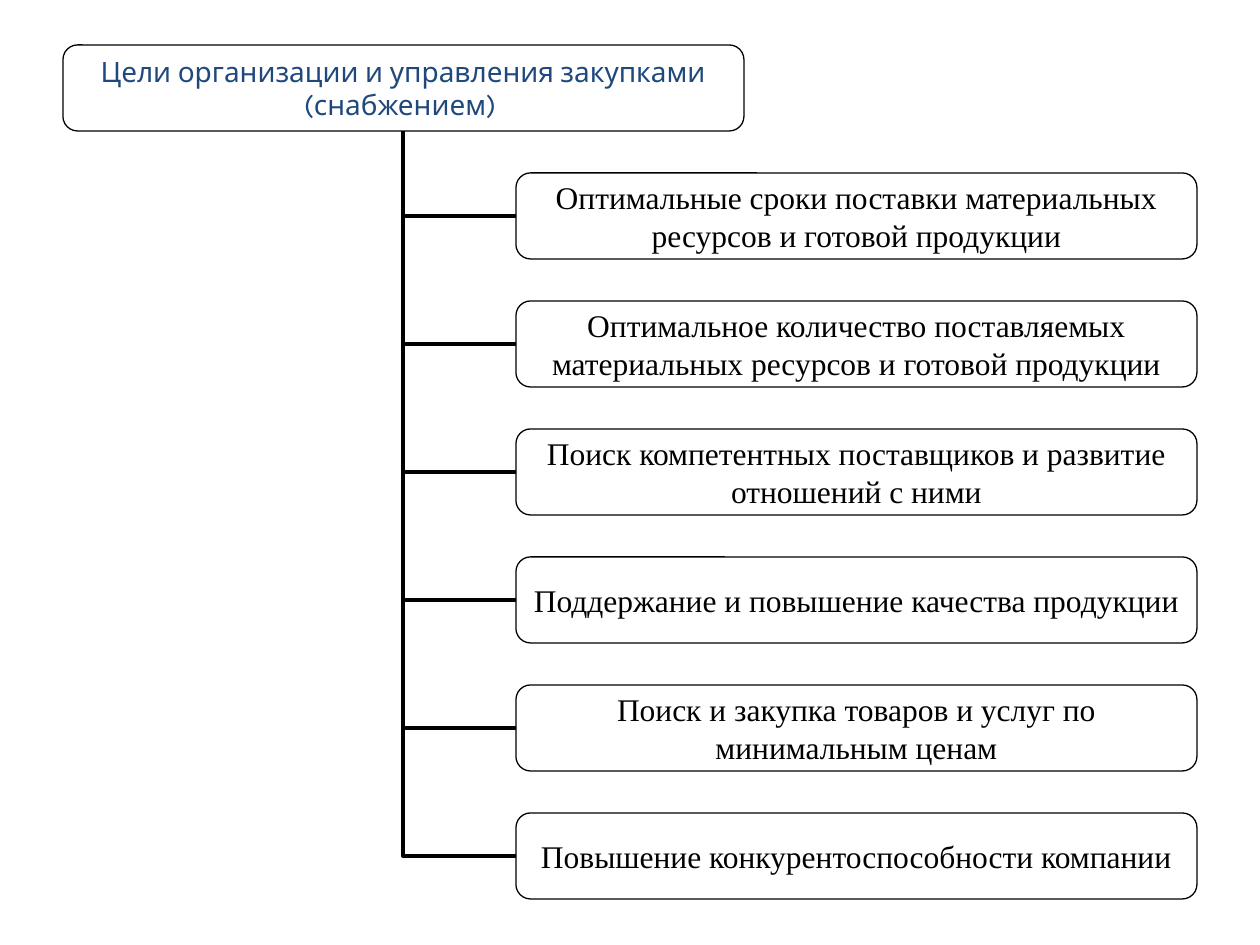
from lxml import etree
from pptx import Presentation
from pptx.dml.color import RGBColor
from pptx.enum.shapes import MSO_CONNECTOR, MSO_SHAPE
from pptx.enum.text import MSO_ANCHOR, PP_ALIGN
from pptx.oxml.ns import qn
from pptx.util import Emu, Pt

ROUNDED = MSO_SHAPE.ROUNDED_RECTANGLE
ELBOW = MSO_CONNECTOR.ELBOW
CENTER = PP_ALIGN.CENTER
MIDDLE = MSO_ANCHOR.MIDDLE

GOALS = [
    "Оптимальные сроки поставки материальных ресурсов и готовой продукции",
    "Оптимальное количество поставляемых материальных ресурсов и готовой продукции",
    "Поиск компетентных поставщиков и развитие отношений с ними",
    "Поддержание и повышение качества продукции",
    "Поиск и закупка товаров и услуг по минимальным ценам",
    "Повышение конкурентоспособности компании",
]


def px(n):
    return Emu(round(n * 914400 / 126))


def rgb(color):
    return RGBColor.from_string(color)


class Chart:
    """Draws the boxes and branches of an organisation chart on one slide."""

    ink = "000000"
    box_w, box_h = 681, 86

    def __init__(self, slide):
        self.slide = slide

    def branch(self, x1, y1, x2, y2):
        s = self.slide.shapes.add_connector(ELBOW, px(x1), px(y1), px(x2), px(y2))
        s.line.color.rgb = rgb(self.ink)
        s.line.width = Pt(2.25)
        sp_pr = s._element.spPr
        sp_pr.find(qn("a:prstGeom")).set("prst", "bentConnector2")
        etree.SubElement(sp_pr, qn("a:effectLst"))

    def box(self, x, y, text, font="Times New Roman", size=18, color=ink):
        s = self.slide.shapes.add_shape(ROUNDED, px(x), px(y), px(self.box_w), px(self.box_h))
        s.adjustments[0] = 0.17
        s.shadow.inherit = False
        s.fill.background()
        s.line.color.rgb = rgb(self.ink)
        s.line.width = Pt(0.75)
        tf = s.text_frame
        tf.word_wrap = True
        tf.vertical_anchor = MIDDLE
        tf.margin_left = tf.margin_right = tf.margin_top = tf.margin_bottom = 0
        p = tf.paragraphs[0]
        p.alignment = CENTER
        r = p.add_run()
        r.text = text
        r.font.name = font
        r.font.size = Pt(size)
        r.font.color.rgb = rgb(color)


def main():
    prs = Presentation()
    prs.slide_width, prs.slide_height = px(1260), px(945)
    chart = Chart(prs.slides.add_slide(prs.slide_layouts[6]))

    root_x, goal_x, top, pitch = 63, 516, 45, 128
    trunk_x = root_x + chart.box_w // 2
    rows = [top + pitch * i for i in range(1, len(GOALS) + 1)]
    for y in reversed(rows):
        chart.branch(goal_x, y + chart.box_h // 2, trunk_x, top + chart.box_h)
    chart.box(root_x, top, "Цели организации и управления закупками (снабжением) ",
              "Karla", 16, "1F497D")
    for y, goal in zip(rows, GOALS):
        chart.box(goal_x, y, goal)

    prs.save("out.pptx")


if __name__ == "__main__":
    main()
